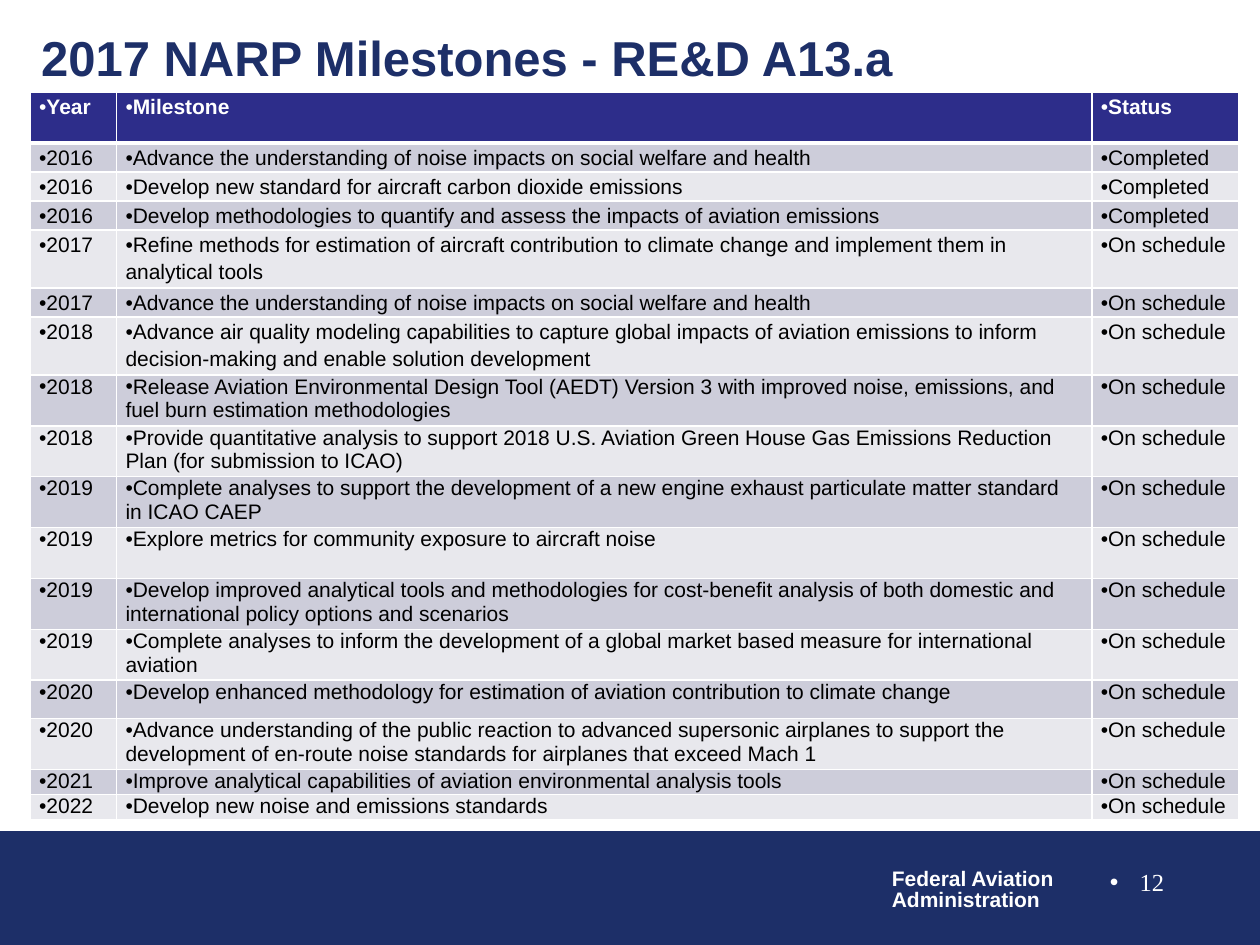
from lxml import etree
from pptx import Presentation
from pptx import util as u
from pptx.dml.color import RGBColor
from pptx.enum import shapes, text
from pptx.oxml.ns import qn

NAVY, HEAD, WHITE, BLACK = "1D2F68", "2D2D8A", "FFFFFF", "000000"
BANDS = ("CDCDDA", "E8E8ED")
TITLE = "2017 NARP Milestones - RE&D A13.a"
OWNER = ("Federal Aviation", "Administration")
DONE, PLAN = "Completed", "On schedule"

# Row height in cm, line spacing, then the three cells
ROWS = [
    (1.03, 1.15, "Year", "Milestone", "Status"),
    (0.54, 1.15, "2016", "Advance the understanding of noise impacts on social welfare and health", DONE),
    (0.54, 1.15, "2016", "Develop new standard for aircraft carbon dioxide emissions", DONE),
    (0.54, 1.15, "2016", "Develop methodologies to quantify and assess the impacts of aviation emissions", DONE),
    (1.09, 1.15, "2017", "Refine methods for estimation of aircraft contribution to climate change and implement them in analytical tools", PLAN),
    (0.54, 1.15, "2017", "Advance the understanding of noise impacts on social welfare and health", PLAN),
    (1.09, 1.15, "2018", "Advance air quality modeling capabilities to capture global impacts of aviation emissions to inform decision-making and enable solution development", PLAN),
    (1.03, 1, "2018", "Release Aviation Environmental Design Tool (AEDT) Version 3 with improved noise, emissions, and fuel burn estimation methodologies", PLAN),
    (0.95, 1, "2018", "Provide quantitative analysis to support 2018 U.S. Aviation Green House Gas Emissions Reduction Plan (for submission to ICAO)", PLAN),
    (1.03, 1, "2019", "Complete analyses to support the development of a new engine exhaust particulate matter standard in ICAO CAEP", PLAN),
    (1.03, 1, "2019", "Explore metrics for community exposure to aircraft noise", PLAN),
    (1.03, 1, "2019", "Develop improved analytical tools and methodologies for cost-benefit analysis of both domestic and international policy options and scenarios", PLAN),
    (0.95, 1, "2019", "Complete analyses to inform the development of a global market based measure for international aviation", PLAN),
    (0.77, 1, "2020", "Develop enhanced methodology for estimation of aviation contribution to climate change", PLAN),
    (1.03, 1, "2020", "Advance understanding of the public reaction to advanced supersonic airplanes to support the development of en-route noise standards for airplanes that exceed Mach 1", PLAN),
    (0.48, 1, "2021", "Improve analytical capabilities of aviation environmental analysis tools", PLAN),
    (0.48, 1, "2022", "Develop new noise and emissions standards", PLAN),
]
COLS = (1.74, 19.66, 2.97)


def tint(code):
    return RGBColor.from_string(code)


def style(para, size, color, bold=False, face="Arial"):
    font = para.font
    font.size, font.bold, font.name = u.Pt(size), bold, face
    font.color.rgb = tint(color)


def bullet(para, hang=0):
    props = para._p.get_or_add_pPr()
    props.set("marL", str(u.Cm(hang)))
    props.set("indent", str(-u.Cm(hang)))
    etree.SubElement(props, qn("a:buFont"), typeface="Arial")
    etree.SubElement(props, qn("a:buChar"), char="•")


def border(cell, side, width):
    props = cell._tc.get_or_add_tcPr()
    line = etree.SubElement(props, qn("a:ln" + side), w=str(u.Pt(width)))
    fill = etree.SubElement(line, qn("a:solidFill"))
    etree.SubElement(fill, qn("a:srgbClr"), val=WHITE)


def label(slide, area, lines, wrap=True):
    frame = slide.shapes.add_textbox(*map(u.Cm, area)).text_frame
    frame.word_wrap = wrap
    frame.text = "\n".join(lines)
    return frame


def add_grid(slide):
    high = sum(row[0] for row in ROWS)
    area = map(u.Cm, (0.61, 1.85, sum(COLS), high))
    grid = slide.shapes.add_table(len(ROWS), len(COLS), *area).table
    for col, wide in zip(grid.columns, COLS):
        col.width = u.Cm(wide)
    for r, (tall, space, *cells) in enumerate(ROWS):
        grid.rows[r].height = u.Cm(tall)
        for c, words in enumerate(cells):
            cell = grid.cell(r, c)
            cell.margin_left = cell.margin_right = u.Cm(0.18)
            cell.margin_top = cell.margin_bottom = 0
            # The rule under the header is thicker than the others
            for side, thick in (("L", 1), ("R", 1), ("T", 3 if r == 1 else 1), ("B", 3 if r == 0 else 1)):
                border(cell, side, thick)
            cell.fill.solid()
            cell.fill.fore_color.rgb = tint(BANDS[(r - 1) % 2] if r else HEAD)
            cell.text = words
            para = cell.text_frame.paragraphs[0]
            para.line_spacing = space
            bullet(para)
            style(para, 12, BLACK if r else WHITE, r == 0)


def main():
    deck = Presentation()
    deck.slide_width, deck.slide_height = u.Cm(25.4), u.Cm(19.05)
    slide = deck.slides.add_slide(deck.slide_layouts[6])

    # Footer band and owner
    band = slide.shapes.add_shape(shapes.MSO_SHAPE.RECTANGLE, *map(u.Cm, (0, 16.76, 25.4, 2.27)))
    band.shadow.inherit = False
    band.fill.solid()
    band.fill.fore_color.rgb = band.line.color.rgb = tint(NAVY)
    band.line.width = u.Pt(0.75)
    for para in label(slide, (17.73, 17.4, 3.81, 1.12), OWNER, False).paragraphs:
        para.line_spacing = 0.85
        style(para, 12, WHITE, True)

    # Title
    frame = label(slide, (0.58, 0.3, 24.49, 1.7), [TITLE])
    frame.vertical_anchor = text.MSO_ANCHOR.MIDDLE
    style(frame.paragraphs[0], 28, NAVY, True)

    add_grid(slide)

    # Page number
    para = label(slide, (18.44, 17.35, 5.28, 1.27), ["12"]).paragraphs[0]
    para.alignment = text.PP_ALIGN.RIGHT
    bullet(para, 0.6)
    style(para, 14, WHITE, face="Times New Roman")

    deck.save("out.pptx")


if __name__ == "__main__":
    main()
